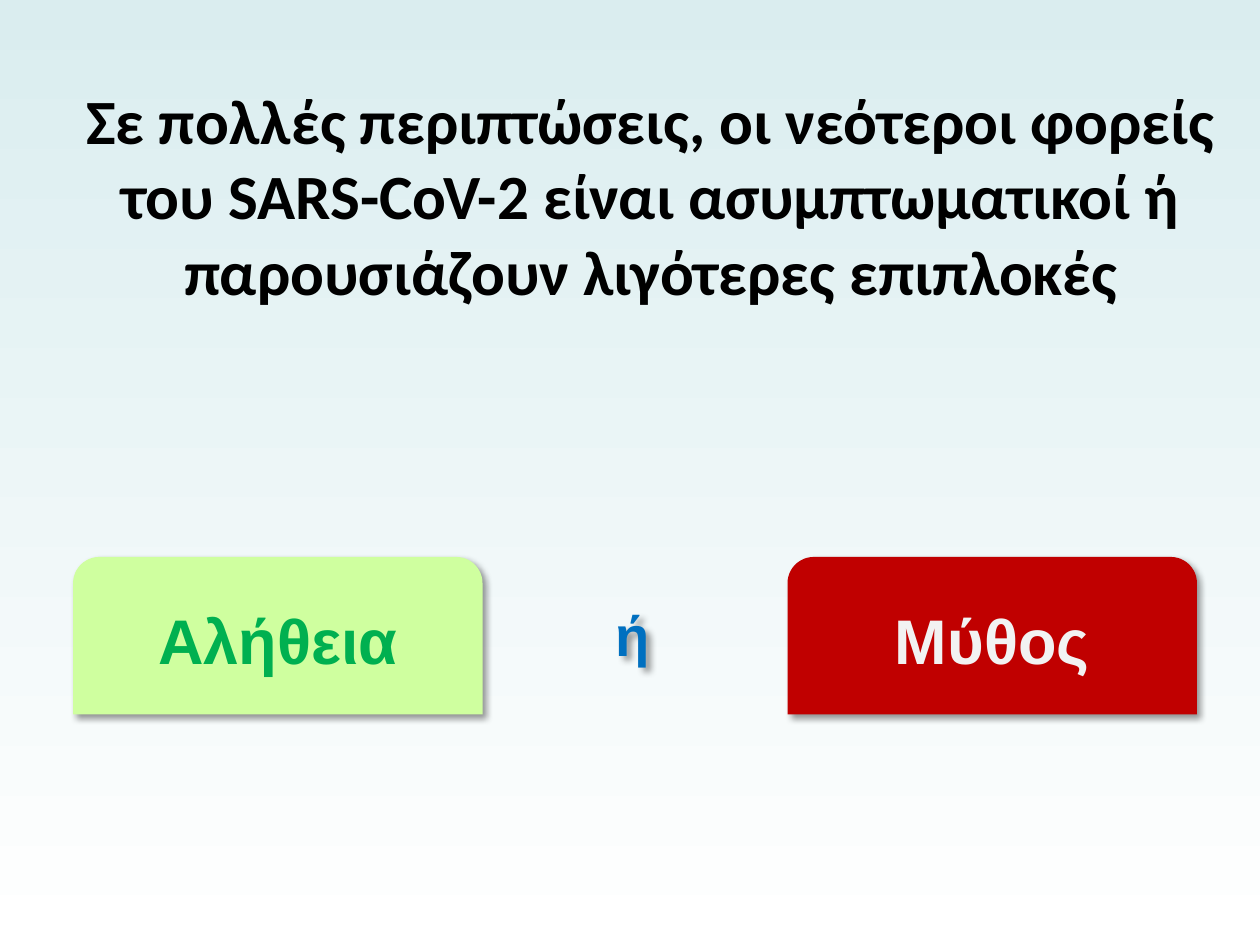
from lxml import etree
from pptx import Presentation
from pptx.dml.color import RGBColor
from pptx.enum.shapes import MSO_SHAPE
from pptx.enum.text import MSO_ANCHOR, PP_ALIGN
from pptx.oxml.ns import qn
from pptx.util import Inches, Pt

CENTER, LEFT = PP_ALIGN.CENTER, PP_ALIGN.LEFT
MIDDLE, TOP = MSO_ANCHOR.MIDDLE, MSO_ANCHOR.TOP
TAB_SHAPE = MSO_SHAPE.ROUND_2_SAME_RECTANGLE

PALE_BLUE = RGBColor(0xDA, 0xED, 0xEF)
WHITE = RGBColor(0xFF, 0xFF, 0xFF)
BLACK = RGBColor(0x00, 0x00, 0x00)
LIGHT_GREEN = RGBColor(0xCF, 0xFF, 0x9F)
GREEN = RGBColor(0x00, 0xB0, 0x50)
RED = RGBColor(0xC0, 0x00, 0x00)
LIGHT_GRAY = RGBColor(0xF2, 0xF2, 0xF2)
BLUE = RGBColor(0x00, 0x70, 0xC0)

STATEMENT = ("Σε πολλές περιπτώσεις, οι νεότεροι φορείς του SARS-CoV-2 είναι "
             "ασυμπτωματικοί ή παρουσιάζουν λιγότερες επιπλοκές")
ANSWERS = [  # text, fill, font colour
    ("Αλήθεια", LIGHT_GREEN, GREEN),
    ("Μύθος", RED, LIGHT_GRAY),
]
OR_WORD = "ή"

SLIDE_WIDTH, SLIDE_HEIGHT = 10, 7.5
STATEMENT_BOX = (0.33, 0.17, SLIDE_WIDTH - 0.33, 2.75)
OR_BOX = (4.79, 4.72, 0.5, 0.64)
ANSWER_LEFT, ANSWER_TOP = 0.58, 4.42
ANSWER_WIDTH, ANSWER_HEIGHT = 3.25, 1.25
ANSWER_STEP = 5.67


def write_text(shape, text, color, font="Arial", size=36, align=CENTER, anchor=MIDDLE):
    frame = shape.text_frame
    frame.word_wrap = True
    frame.vertical_anchor = anchor
    paragraph = frame.paragraphs[0]
    paragraph.alignment = align
    run = paragraph.add_run()
    run.text = text
    run.font.name = font
    run.font.size = Pt(size)
    run.font.bold = True
    run.font.color.rgb = color


def add_shadow(shape):
    """Cast a soft black shadow towards the lower right."""
    shape.shadow.inherit = False
    effects = shape.element.spPr.find(qn("a:effectLst"))
    shadow = etree.SubElement(effects, qn("a:outerShdw"), blurRad=str(Pt(4)),
                              dist=str(Pt(3)), dir=str(45 * 60000),
                              algn="tl", rotWithShape="0")
    color = etree.SubElement(shadow, qn("a:srgbClr"), val=str(BLACK))
    etree.SubElement(color, qn("a:alpha"), val="40000")


def add_text_box(slide, box, text, color, **text_format):
    text_box = slide.shapes.add_textbox(*map(Inches, box))
    write_text(text_box, text, color, **text_format)
    return text_box


def add_answer(slide, column, text, fill_color, font_color):
    box = (ANSWER_LEFT + column * ANSWER_STEP, ANSWER_TOP, ANSWER_WIDTH, ANSWER_HEIGHT)
    answer = slide.shapes.add_shape(TAB_SHAPE, *map(Inches, box))
    answer.fill.solid()
    answer.fill.fore_color.rgb = fill_color
    answer.line.fill.background()
    add_shadow(answer)
    write_text(answer, text, font_color)


def paint_background(slide):
    fill = slide.background.fill
    fill.gradient()
    fill.gradient_angle = 270
    for stop, color in zip(fill.gradient_stops, (PALE_BLUE, WHITE)):
        stop.color.rgb = color


def main():
    presentation = Presentation()
    presentation.slide_width = Inches(SLIDE_WIDTH)
    presentation.slide_height = Inches(SLIDE_HEIGHT)
    slide = presentation.slides.add_slide(presentation.slide_layouts[6])
    paint_background(slide)
    add_text_box(slide, STATEMENT_BOX, STATEMENT, BLACK, font="Calibri")
    for column, answer in enumerate(ANSWERS):
        add_answer(slide, column, *answer)
    or_box = add_text_box(slide, OR_BOX, OR_WORD, BLUE, size=32, align=LEFT, anchor=TOP)
    add_shadow(or_box)
    presentation.save("out.pptx")


if __name__ == "__main__":
    main()
